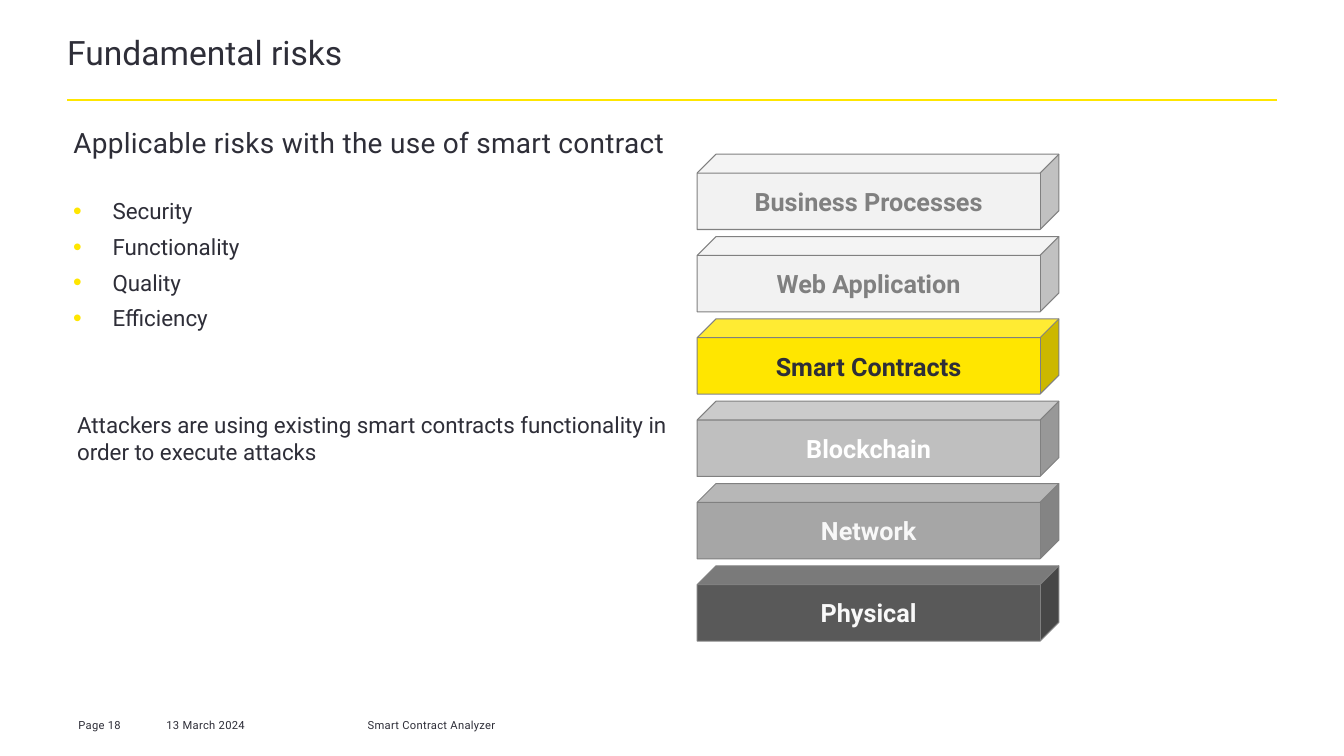
import pptx
import pptx.util
import pptx.dml.color
import pptx.enum.shapes
import pptx.enum.text
import pptx.oxml
import pptx.oxml.ns

Inches, Pt = pptx.util.Inches, pptx.util.Pt
RGB = pptx.dml.color.RGBColor.from_string
ALIGN = pptx.enum.text.PP_ALIGN
ANCHOR = pptx.enum.text.MSO_ANCHOR
NS = pptx.oxml.ns.nsdecls("a")

WIDTH, HEIGHT = 13.34, 7.5
COLORS = {"ink": "2E2E38", "yellow": "FFE600", "edge": "808080",
          "pale": "F2F2F2", "silver": "BFBFBF", "grey": "A6A6A6",
          "dark": "595959", "light": "F8F8F8", "white": "FFFFFF"}
LAYERS = [("Business Processes", "pale", "edge"),
          ("Web Application", "pale", "edge"),
          ("Smart Contracts", "yellow", "ink"),
          ("Blockchain", "silver", "white"),
          ("Network", "grey", "light"),
          ("Physical", "dark", "light")]
RISKS = ["Security", "Functionality", "Quality", "Efficiency"]


def write(paragraph, text, size=16, color="ink", bold=False, align=ALIGN.LEFT,
          spacing=0, before=0, after=0, line=1.0, indent=(0, 0), bullet=None):
    """Fill a paragraph with one formatted run."""
    properties = paragraph._p.get_or_add_pPr()
    properties.set("marL", str(Inches(indent[0])))
    properties.set("indent", str(Inches(indent[1])))
    paragraph.alignment = align
    paragraph.line_spacing = line
    paragraph.space_before, paragraph.space_after = Pt(before), Pt(after)
    marks = [f'<a:buNone {NS}/>']
    if bullet:
        marks = [f'<a:buClr {NS}><a:srgbClr val="{COLORS["yellow"]}"/></a:buClr>',
                 f'<a:buSzPct {NS} val="110000"/>',
                 f'<a:buFont {NS} typeface="Arial"/>',
                 f'<a:buChar {NS} char="{bullet}"/>']
    for mark in marks:
        properties.append(pptx.oxml.parse_xml(mark))
    run = paragraph.add_run()
    run.text = text
    run.font.name, run.font.size, run.font.bold = "Roboto", Pt(size), bold
    run.font.color.rgb = RGB(COLORS[color])
    if spacing:
        run._r.get_or_add_rPr().set("spc", str(round(spacing * 100)))


def place(holder, box):
    """Move a placeholder into a box, with no insets and text at the top."""
    holder.left, holder.top, holder.width, holder.height = map(Inches, box)
    frame = holder.text_frame
    frame.margin_left = frame.margin_top = frame.margin_right = frame.margin_bottom = 0
    frame.vertical_anchor = ANCHOR.TOP
    frame.word_wrap = True
    frame.auto_size = pptx.enum.text.MSO_AUTO_SIZE.NONE
    return frame


def add_note(slide, box, text, **style):
    frame = slide.shapes.add_textbox(*map(Inches, box)).text_frame
    frame.word_wrap = True
    write(frame.paragraphs[0], text, **style)


def add_header(slide, box):
    left, top, width, height = box
    title = place(slide.shapes.title, box)
    write(title.paragraphs[0], "Fundamental risks", size=24)
    # Rule just below the title
    y = Inches(top + height + 0.02)
    rule = slide.shapes.add_connector(pptx.enum.shapes.MSO_CONNECTOR.STRAIGHT,
                                      Inches(left), y, Inches(left + width), y)
    rule.line.color.rgb = RGB(COLORS["yellow"])
    rule.line.width = Pt(1.5)
    rule._element.spPr.append(pptx.oxml.parse_xml(f'<a:effectLst {NS}/>'))


def add_risks(slide, box):
    body = place(slide.placeholders[1], box)
    write(body.paragraphs[0], "Applicable risks with the use of smart contract",
          size=20, spacing=0.2, indent=(0.39, 0))
    for number, risk in enumerate(RISKS):
        write(body.add_paragraph(), risk, line=0.85, after=6, bullet="•",
              before=3.2 if number else 30.6, indent=(0.78, -0.39))


def add_layers(slide, box):
    left, top, width, height = box
    gap = 0.07
    block = (height - gap * (len(LAYERS) - 1)) / len(LAYERS)
    for row, (label, fill, ink) in enumerate(LAYERS):
        layer = slide.shapes.add_shape(
            pptx.enum.shapes.MSO_SHAPE.CUBE, Inches(left),
            Inches(top + row * (block + gap)), Inches(width), Inches(block))
        layer.shadow.inherit = False
        layer.fill.solid()
        layer.fill.fore_color.rgb = RGB(COLORS[fill])
        layer.line.color.rgb = RGB(COLORS["edge"])
        layer.line.width = Pt(0.75)
        layer.text_frame.vertical_anchor = ANCHOR.MIDDLE
        write(layer.text_frame.paragraphs[0], label, size=18, color=ink,
              bold=True, align=ALIGN.CENTER)


def add_footer(slide, box):
    left, top, width, height = box
    for offset, share, text in [(0, 0.12, "Page 18"),
                                (0.14, 0.21, "13 March 2024"),
                                (0.46, 0.54, "Smart Contract Analyzer")]:
        add_note(slide, (left + offset * width, top, share * width, height),
                 text, size=8, spacing=0.2)


def main():
    deck = pptx.Presentation()
    deck.slide_width, deck.slide_height = Inches(WIDTH), Inches(HEIGHT)
    slide = deck.slides.add_slide(deck.slide_layouts[1])
    margin = 0.05 * WIDTH
    content = 0.9 * WIDTH
    add_header(slide, (margin, 0.32, content, 0.65))
    add_risks(slide, (margin - 0.33, 1.24, content, 5.41))
    add_note(slide, (margin, 4.03, 0.46 * WIDTH, 2.32),
             "Attackers are using existing smart contracts functionality "
             "in order to execute attacks")
    add_layers(slide, (6.92, 1.53, 3.59, 4.83))
    add_footer(slide, (0.68, 7.08, 6.24, 0.2))
    deck.save("out.pptx")


if __name__ == "__main__":
    main()
